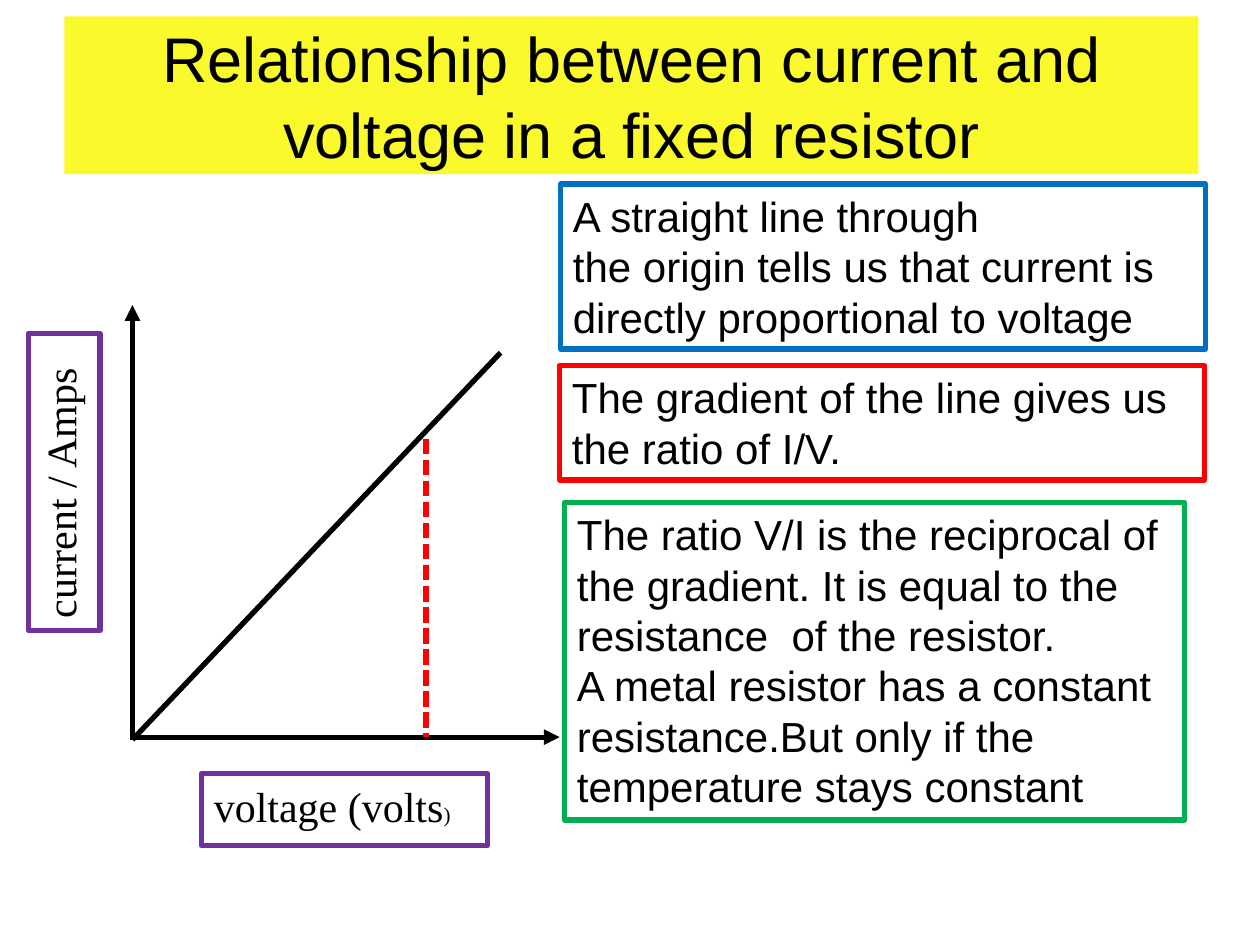
from pptx import Presentation
from pptx.dml.color import RGBColor
from pptx.enum.dml import MSO_LINE_DASH_STYLE as Dash
from pptx.enum.shapes import MSO_CONNECTOR as Conn, MSO_SHAPE as Kind
from pptx.enum.text import MSO_ANCHOR as Anchor, MSO_AUTO_SIZE as Auto, PP_ALIGN as Align
from pptx.oxml.xmlchemy import OxmlElement as Node
from pptx.util import Cm, Pt

INK = {"black": "000000", "white": "FFFFFF", "yellow": "F9F92B", "purple": "7030A0",
       "blue": "0070C0", "red": "FF0000", "green": "00B050"}


def tint(name):
    return RGBColor.from_string(INK[name])


def style(item, **vals):
    for key, val in vals.items():
        setattr(item, key, val)


def write(para, text, size, face):
    run = para.add_run()
    run.text = text
    style(run.font, size=Pt(size), name=face)
    run.font.color.rgb = tint("black")


def title(slide, box):
    head = slide.shapes.title
    style(head, **dict(zip(("left", "top", "width", "height"), map(Cm, box))))
    head.fill.solid()
    head.fill.fore_color.rgb = tint("yellow")
    style(head.text_frame, word_wrap=True, auto_size=Auto.NONE, vertical_anchor=Anchor.MIDDLE)
    para = head.text_frame.paragraphs[0]
    para.alignment = Align.CENTER
    write(para, "Relationship between current and voltage in a fixed resistor", 36, "Arial")


def frame(slide, box, edge, paras, face, fill=None, turn=0):
    rect = slide.shapes.add_shape(Kind.RECTANGLE, *map(Cm, box))
    rect.shadow.inherit = False
    rect.rotation = turn
    if fill:
        rect.fill.solid()
        rect.fill.fore_color.rgb = tint(fill)
    else:
        rect.fill.background()
    rect.line.color.rgb = tint(edge)
    rect.line.width = Pt(3)
    body = rect.text_frame
    style(body, word_wrap=True, vertical_anchor=Anchor.TOP)
    for i, runs in enumerate(paras):
        para = body.add_paragraph() if i else body.paragraphs[0]
        para.alignment = Align.LEFT
        for text, size in runs:
            write(para, text, size, face)


def stroke(slide, start, end, hue="black", arrow=False, dash=None):
    line = slide.shapes.add_connector(Conn.STRAIGHT, *map(Cm, start + end))
    line.line.color.rgb = tint(hue)
    style(line.line, width=Pt(3), dash_style=dash)
    if arrow:
        tip = Node("a:tailEnd")
        tip.set("type", "triangle")
        line.line._get_or_add_ln().append(tip)
    line._element.spPr.append(Node("a:effectLst"))


def graph(slide, box):
    left, top, width, height = box
    base = top + height
    axis = left + 2
    for place, turn, runs in (
        ((left - 2.37, top + 2.84, 5.99, 1.45), 270, [("current / Amps", 24)]),
        ((left + 3.39, base + 0.74, 5.77, 1.45), 0, [("voltage (volts", 24), (")", 12)]),
    ):
        frame(slide, place, "purple", [runs], "Times New Roman", "white", turn)
    stroke(slide, (axis, base), (axis, top), arrow=True)
    stroke(slide, (axis - 0.05, base), (left + width, base), arrow=True)
    stroke(slide, (axis, base + 0.05), (axis + 7.42, top + 0.96))
    stroke(slide, (axis + 5.92, top + 2.69), (axis + 5.92, base), "red", dash=Dash.SQUARE_DOT)


def notes(slide, box):
    left, top, width = box
    for dx, dy, wide, tall, edge, lines in (
        (0.02, 0, width, 3.33, "blue",
         ["A straight line through",
          "the origin tells us that current is directly proportional to voltage"]),
        (0, 3.66, width, 2.31, "red",
         ["The gradient of the line gives us the ratio of I/V."]),
        (0.1, 6.42, width - 0.5, 6.4, "green",
         ["The ratio V/I is the reciprocal of the gradient. It is equal to the "
          "resistance  of the resistor.",
          "A metal resistor has a constant resistance.But only if the "
          "temperature stays constant"]),
    ):
        paras = [[(line, 24)] for line in lines]
        frame(slide, (left + dx, top + dy, wide, tall), edge, paras, "Arial")


def main():
    deck = Presentation()
    style(deck, slide_width=Cm(25.4), slide_height=Cm(19.05))
    slide = deck.slides.add_slide(deck.slide_layouts[5])
    title(slide, (1.3, 0.33, 22.86, 3.18))
    graph(slide, (0.67, 6.15, 10.61, 8.71))
    notes(slide, (11.28, 3.71, 13))
    deck.save("out.pptx")


if __name__ == "__main__":
    main()
